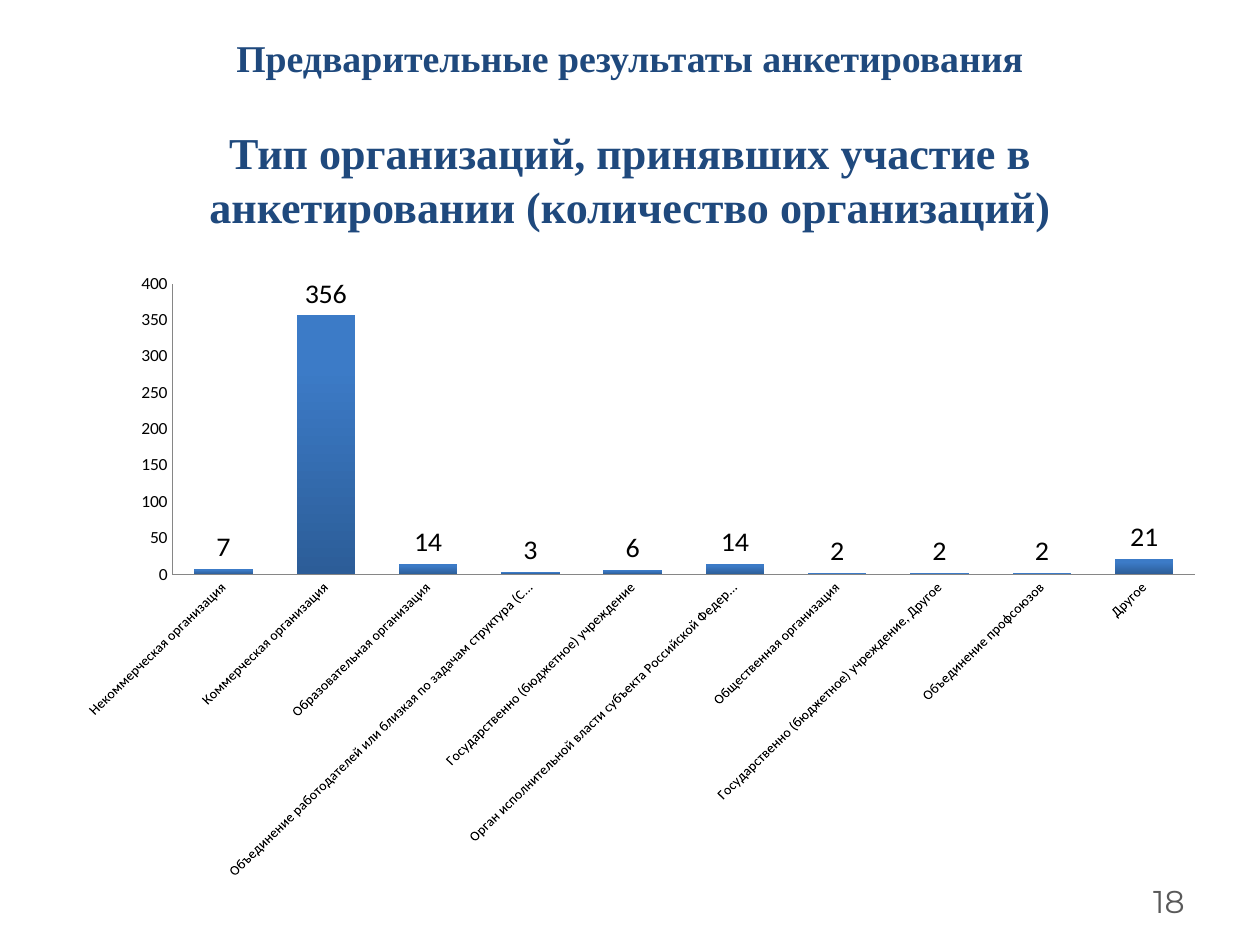
"""Build the slide on the types of organisations that took part in the survey."""
from lxml.etree import SubElement
from pptx import Presentation
from pptx.chart.data import CategoryChartData
from pptx.dml.color import RGBColor
from pptx.enum.chart import XL_CHART_TYPE, XL_LABEL_POSITION, XL_TICK_MARK
from pptx.enum.text import MSO_ANCHOR, PP_ALIGN
from pptx.oxml.ns import qn
from pptx.util import Pt

NAVY = RGBColor(0x1F, 0x49, 0x7D)
GREY = RGBColor(0x59, 0x59, 0x59)
BLACK = RGBColor(0, 0, 0)
AXIS_GREY = RGBColor(0x86, 0x86, 0x86)
BAR_DARK = RGBColor(0x2C, 0x5D, 0x98)
BAR_LIGHT = RGBColor(0x3C, 0x7B, 0xC7)

HEADING = {"name": "Times New Roman", "bold": True, "color": NAVY}
TITLES = [
    ("Предварительные результаты анкетирования",
     {**HEADING, "size": Pt(21.6)}, {"space_after": Pt(26)}),
    ("Тип организаций, принявших участие в анкетировании (количество организаций)",
     {**HEADING, "size": Pt(25.2)}, {"line_spacing": Pt(30.5)}),
]
PAGE_NUMBER = [("18", {"name": "Montserrat", "size": Pt(18), "color": GREY}, {})]
ORGANISATIONS = [
    ("Некоммерческая организация", 7),
    ("Коммерческая организация", 356),
    ("Образовательная организация", 14),
    ("Объединение работодателей или близкая по задачам структура (СРО, ТПП и др.)", 3),
    ("Государственно (бюджетное) учреждение", 6),
    ("Орган исполнительной власти субъекта Российской Федерации", 14),
    ("Общественная организация", 2),
    ("Государственно (бюджетное) учреждение, Другое", 2),
    ("Объединение профсоюзов", 2),
    ("Другое", 21),
]
PLOT_AREA = {"x": 0.078, "y": 0.048, "w": 0.902, "h": 0.482}


def set_attrs(obj, values):
    for name, value in values.items():
        setattr(obj, name, value)


def set_font(font, values):
    for name, value in values.items():
        if name == "color":
            font.color.rgb = value
        else:
            setattr(font, name, value)


def add_text(slide, box, paragraphs, align, anchor, margin):
    tf = slide.shapes.add_textbox(*map(Pt, box)).text_frame
    set_attrs(tf, {"word_wrap": True, "vertical_anchor": anchor,
                   "margin_left": Pt(margin), "margin_right": Pt(margin),
                   "margin_top": 0, "margin_bottom": 0})
    for i, (text, font, spacing) in enumerate(paragraphs):
        p = tf.paragraphs[0] if i == 0 else tf.add_paragraph()
        set_attrs(p, {"alignment": align, **spacing})
        r = p.add_run()
        r.text = text
        set_font(r.font, font)


def set_plot_layout(chart, area):
    plot_area = chart._chartSpace.chart.plotArea
    for old in plot_area.findall(qn("c:layout")):
        plot_area.remove(old)
    layout = SubElement(plot_area, qn("c:layout"))
    plot_area.insert(0, layout)
    manual = SubElement(layout, qn("c:manualLayout"))
    values = {"layoutTarget": "inner", "xMode": "edge", "yMode": "edge", **area}
    for name, value in values.items():
        SubElement(manual, qn(f"c:{name}")).set("val", str(value))


def add_bar_chart(slide, box):
    data = CategoryChartData()
    data.categories = [name for name, _ in ORGANISATIONS]
    data.add_series("Series 1", [count for _, count in ORGANISATIONS])
    chart = slide.shapes.add_chart(
        XL_CHART_TYPE.COLUMN_CLUSTERED, *map(Pt, box), data).chart
    set_attrs(chart, {"has_legend": False, "has_title": False})
    set_font(chart.font, {"name": "Calibri", "size": Pt(10), "color": BLACK})
    set_plot_layout(chart, PLOT_AREA)

    for axis, size in ((chart.category_axis, 8), (chart.value_axis, 10)):
        set_attrs(axis, {"has_major_gridlines": False,
                         "major_tick_mark": XL_TICK_MARK.NONE,
                         "minor_tick_mark": XL_TICK_MARK.NONE})
        axis.tick_labels.font.size = Pt(size)
        axis.format.line.color.rgb = AXIS_GREY
        axis.format.line.width = Pt(0.75)
    set_attrs(chart.value_axis,
              {"minimum_scale": 0, "maximum_scale": 400, "major_unit": 50})
    chart.category_axis._element.txPr.bodyPr.set("rot", "-2700000")

    plot = chart.plots[0]
    set_attrs(plot, {"gap_width": 75, "vary_by_categories": False,
                     "has_data_labels": True})
    set_attrs(plot.data_labels, {"show_value": True,
                                 "position": XL_LABEL_POSITION.OUTSIDE_END})
    set_font(plot.data_labels.font, {"size": Pt(16), "color": BLACK})

    fill = plot.series[0].format.fill
    fill.gradient()
    fill.gradient_angle = 90
    for stop, color, position in zip(
            fill.gradient_stops, (BAR_DARK, BAR_LIGHT), (0, 0.8)):
        stop.color.rgb = color
        stop.position = position


def main():
    prs = Presentation()
    set_attrs(prs, {"slide_width": Pt(720), "slide_height": Pt(540)})
    slide = prs.slides.add_slide(prs.slide_layouts[6])
    add_text(slide, (36, 19.6, 648, 112), TITLES,
             PP_ALIGN.CENTER, MSO_ANCHOR.TOP, 7.2)
    add_bar_chart(slide, (48, 145.5, 648, 357))
    add_text(slide, (516, 500.5, 168, 28.8), PAGE_NUMBER,
             PP_ALIGN.RIGHT, MSO_ANCHOR.MIDDLE, 7.2)
    prs.save("out.pptx")


if __name__ == "__main__":
    main()
